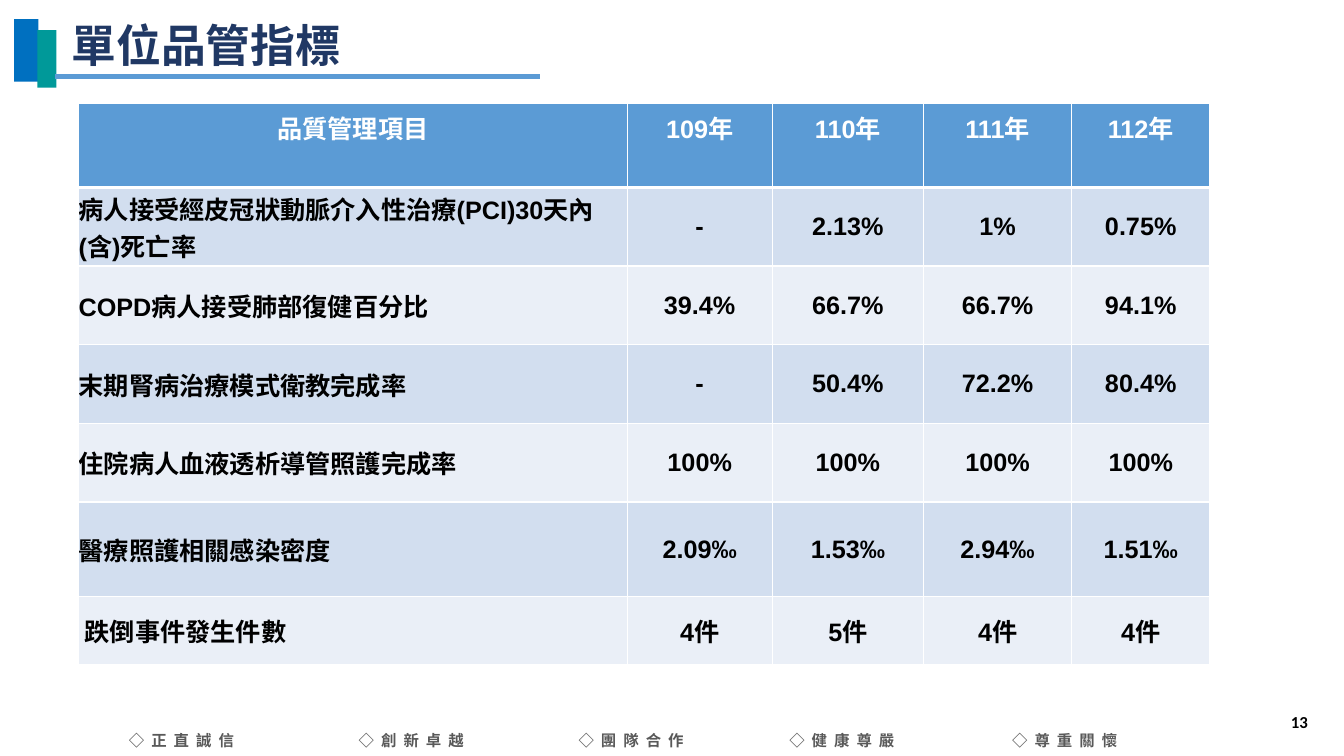
from dataclasses import dataclass

from lxml.etree import SubElement
from pptx import Presentation
from pptx.dml.color import RGBColor
from pptx.enum.shapes import MSO_CONNECTOR, MSO_SHAPE
from pptx.enum.text import MSO_ANCHOR as Anchor, MSO_AUTO_SIZE as AutoSize, PP_ALIGN as Align
from pptx.oxml.ns import qn
from pptx.slide import Slide
from pptx.table import _Cell as Cell
from pptx.util import Emu, Pt

PX = 9144  # EMU per px, 100 px to the inch

BLUE = RGBColor(0x00, 0x70, 0xC0)
TEAL = RGBColor(0x00, 0x99, 0x99)
SKY = RGBColor(0x5B, 0x9B, 0xD5)
NAVY = RGBColor(0x20, 0x38, 0x64)
GREY = RGBColor(0x59, 0x59, 0x59)
BAND_DARK = RGBColor(0xD2, 0xDE, 0xEF)
BAND_LIGHT = RGBColor(0xEA, 0xEF, 0xF7)
WHITE = RGBColor(0xFF, 0xFF, 0xFF)
BLACK = RGBColor(0x00, 0x00, 0x00)
CJK = "Noto Sans CJK SC"


@dataclass(frozen=True)
class Box:
    x: int
    y: int
    w: int
    h: int

    def emu(self) -> tuple[Emu, ...]:
        return tuple(Emu(v * PX) for v in (self.x, self.y, self.w, self.h))


@dataclass(frozen=True)
class Style:
    size: int
    color: RGBColor
    font: str = CJK
    spacing: int = 0  # points between letters


@dataclass(frozen=True)
class Label:
    box: Box
    text: str
    style: Style
    align: Align = Align.LEFT
    anchor: Anchor = Anchor.MIDDLE
    wrap: bool = True
    line_spacing: float = 1.0


TITLE = Style(32, NAVY)
MOTTO = Style(11, GREY, spacing=5)
NUMBER = Style(12, BLACK, "Calibri")
HEAD = Style(18, WHITE, "Arial")
BODY = Style(18, BLACK, "Arial")

BARS = [(Box(14, 19, 24, 62), BLUE), (Box(37, 30, 19, 57), TEAL)]
MOTTOES = [(118, "正直誠信"), (346, "創新卓越"), (564, "團隊合作"),
           (773, "健康尊嚴"), (994, "尊重關懷")]

TABLE_BOX = Box(78, 103, 1122, 556)
COL_WIDTHS = [544, 144, 150, 147, 137]
ROW_HEIGHTS = [83, 78, 78, 78, 78, 94, 67]
ROWS = [
    ["品質管理項目", "109年", "110年", "111年", "112年"],
    ["病人接受經皮冠狀動脈介入性治療(PCI)30天內(含)死亡率", "-", "2.13%", "1%", "0.75%"],
    ["COPD病人接受肺部復健百分比", "39.4%", "66.7%", "66.7%", "94.1%"],
    ["末期腎病治療模式衛教完成率", "-", "50.4%", "72.2%", "80.4%"],
    ["住院病人血液透析導管照護完成率", "100%", "100%", "100%", "100%"],
    ["醫療照護相關感染密度", "2.09‰", "1.53‰", "2.94‰", "1.51‰"],
    ["跌倒事件發生件數", "4件", "5件", "4件", "4件"],
]
LAST_ROW_INDENT = 6


def add_run(p, text: str, style: Style) -> None:
    r = p.add_run()
    r.text = text
    f = r.font
    f.size, f.bold, f.name = Pt(style.size), True, style.font
    f.color.rgb = style.color
    rPr = r._r.get_or_add_rPr()
    SubElement(rPr, qn("a:ea")).set("typeface", CJK)
    if style.spacing:
        rPr.set("spc", str(style.spacing * 100))


def add_label(s: Slide, label: Label) -> None:
    tf = s.shapes.add_textbox(*label.box.emu()).text_frame
    tf.word_wrap = label.wrap
    tf.auto_size = AutoSize.NONE if label.wrap else AutoSize.SHAPE_TO_FIT_TEXT
    tf.vertical_anchor = label.anchor
    p = tf.paragraphs[0]
    p.alignment = label.align
    p.line_spacing = label.line_spacing
    add_run(p, label.text, label.style)


def add_bar(s: Slide, box: Box, color: RGBColor) -> None:
    sp = s.shapes.add_shape(MSO_SHAPE.RECTANGLE, *box.emu())
    sp.shadow.inherit = False
    sp.fill.solid()
    sp.fill.fore_color.rgb = color
    sp.line.fill.background()


def add_rule(s: Slide, x1: int, x2: int, y: int) -> None:
    ends = [Emu(v * PX) for v in (x1, y, x2, y)]
    line = s.shapes.add_connector(MSO_CONNECTOR.STRAIGHT, *ends)
    line.line.color.rgb = SKY
    line.line.width = Pt(3)
    SubElement(line._element.spPr, qn("a:effectLst"))


def set_borders(cell: Cell, top: int, bottom: int) -> None:
    tcPr = cell._tc.get_or_add_tcPr()
    for side, width in (("L", 1), ("R", 1), ("T", top), ("B", bottom)):
        ln = SubElement(tcPr, qn(f"a:ln{side}"), w=str(Pt(width)))
        fill = SubElement(ln, qn("a:solidFill"))
        SubElement(fill, qn("a:srgbClr"), val=str(WHITE))


def fill_cell(cell: Cell, text: str, row: int, col: int) -> None:
    header = row == 0
    # Borders come before the fill in the cell properties
    set_borders(cell, top=3 if row == 1 else 1, bottom=3 if header else 1)
    cell.fill.solid()
    band = BAND_DARK if row % 2 else BAND_LIGHT
    cell.fill.fore_color.rgb = SKY if header else band
    indent = LAST_ROW_INDENT if row == len(ROWS) - 1 and col == 0 else 0
    cell.margin_left = Emu((10 if header else indent) * PX)
    cell.margin_right = Emu((10 if header else 0) * PX)
    cell.margin_top = cell.margin_bottom = Emu((5 if header else 0) * PX)
    cell.vertical_anchor = Anchor.TOP if header else Anchor.MIDDLE
    p = cell.text_frame.paragraphs[0]
    p.alignment = Align.CENTER if header or col else Align.LEFT
    add_run(p, text, HEAD if header else BODY)


def add_indicator_table(s: Slide) -> None:
    table = s.shapes.add_table(len(ROWS), len(COL_WIDTHS), *TABLE_BOX.emu()).table
    for column, width in zip(table.columns, COL_WIDTHS):
        column.width = Emu(width * PX)
    for row, height in zip(table.rows, ROW_HEIGHTS):
        row.height = Emu(height * PX)
    for i, texts in enumerate(ROWS):
        for j, text in enumerate(texts):
            fill_cell(table.cell(i, j), text, i, j)


def main() -> None:
    prs = Presentation()
    prs.slide_width, prs.slide_height = Emu(1333 * PX), Emu(750 * PX)
    s = prs.slides.add_slide(prs.slide_layouts[6])

    # Title decoration
    for box, color in BARS:
        add_bar(s, box, color)
    add_rule(s, 55, 536, 76)

    # Footer mottoes
    for x, motto in MOTTOES:
        add_label(s, Label(Box(x, 720, 126, 29), "◇" + motto, MOTTO,
                           anchor=Anchor.TOP, wrap=False))

    # Title and slide number
    add_label(s, Label(Box(61, 19, 1122, 57), "單位品管指標", TITLE, line_spacing=0.9))
    add_label(s, Label(Box(1007, 696, 300, 40), "13", NUMBER, align=Align.RIGHT))

    # Quality indicators by year
    add_indicator_table(s)
    prs.save("out.pptx")


if __name__ == "__main__":
    main()
